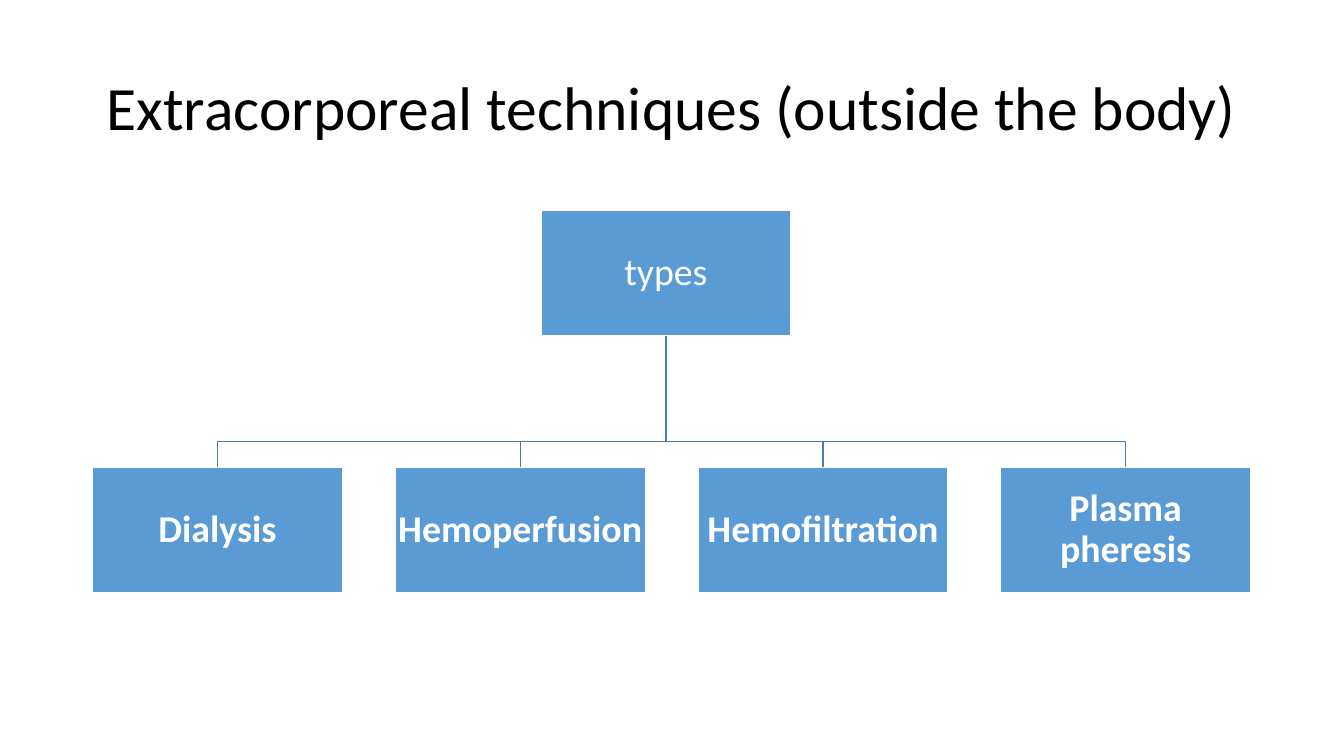
"""Build a slide with a tree of extracorporeal techniques."""
from pptx import Presentation, util as u
from pptx.dml.color import RGBColor
from pptx.enum import shapes, text

prs = Presentation()
prs.slide_width, prs.slide_height = u.Pt(960), u.Pt(540)
s = prs.slides.add_slide(prs.slide_layouts[6])


def rgb(value):
    return RGBColor.from_string(value)


def write(sp, content, size, color, bold=False, inset_x=1.35, inset_y=1.35):
    tf = sp.text_frame
    tf.word_wrap = True
    tf.vertical_anchor = text.MSO_ANCHOR.MIDDLE
    tf.margin_left = tf.margin_right = u.Pt(inset_x)
    tf.margin_top = tf.margin_bottom = u.Pt(inset_y)
    p = tf.paragraphs[0]
    p.alignment = text.PP_ALIGN.CENTER
    p.line_spacing = 0.9
    r = p.add_run()
    r.text = content
    r.font.name = "Calibri"
    r.font.size = u.Pt(size)
    r.font.bold = bold
    r.font.color.rgb = rgb(color)


title = s.shapes.add_textbox(u.Pt(66), u.Pt(28.75), u.Pt(828), u.Pt(100.8))
write(title, "Extracorporeal techniques (outside the body)", 44, "000000",
      inset_x=7.2, inset_y=3.6)

box_w, box_h = 178.7, 89.35
left, pitch = 66, 216.25
root_top, child_top, bus_y = 150.3, 334, 315.3
root_left = left + 1.5 * pitch - 4
root_x = root_left + box_w / 2
techniques = ["Dialysis", "Hemoperfusion", "Hemofiltration", "Plasma pheresis"]
child_lefts = [left + i * pitch for i in range(len(techniques))]

for child_left in reversed(child_lefts):
    child_x = child_left + box_w / 2
    fb = s.shapes.build_freeform(u.Pt(root_x), u.Pt(root_top + box_h))
    bends = [(root_x, bus_y), (child_x, bus_y), (child_x, child_top)]
    fb.add_line_segments([(u.Pt(x), u.Pt(y)) for x, y in bends], close=False)
    branch = fb.convert_to_shape()
    branch.shadow.inherit = False
    branch.fill.background()
    branch.line.color.rgb = rgb("497CAB")
    branch.line.width = u.Pt(1)

boxes = [("types", root_left, root_top, False)]
boxes += [(name, x, child_top, True) for name, x in zip(techniques, child_lefts)]
for name, x, y, bold in boxes:
    sp = s.shapes.add_shape(shapes.MSO_SHAPE.RECTANGLE,
                            u.Pt(x), u.Pt(y), u.Pt(box_w), u.Pt(box_h))
    sp.shadow.inherit = False
    sp.fill.solid()
    sp.fill.fore_color.rgb = rgb("5B9BD5")
    sp.line.color.rgb = rgb("FFFFFF")
    sp.line.width = u.Pt(1)
    write(sp, name, 27, "FFFFFF", bold=bold)

prs.save("out.pptx")
